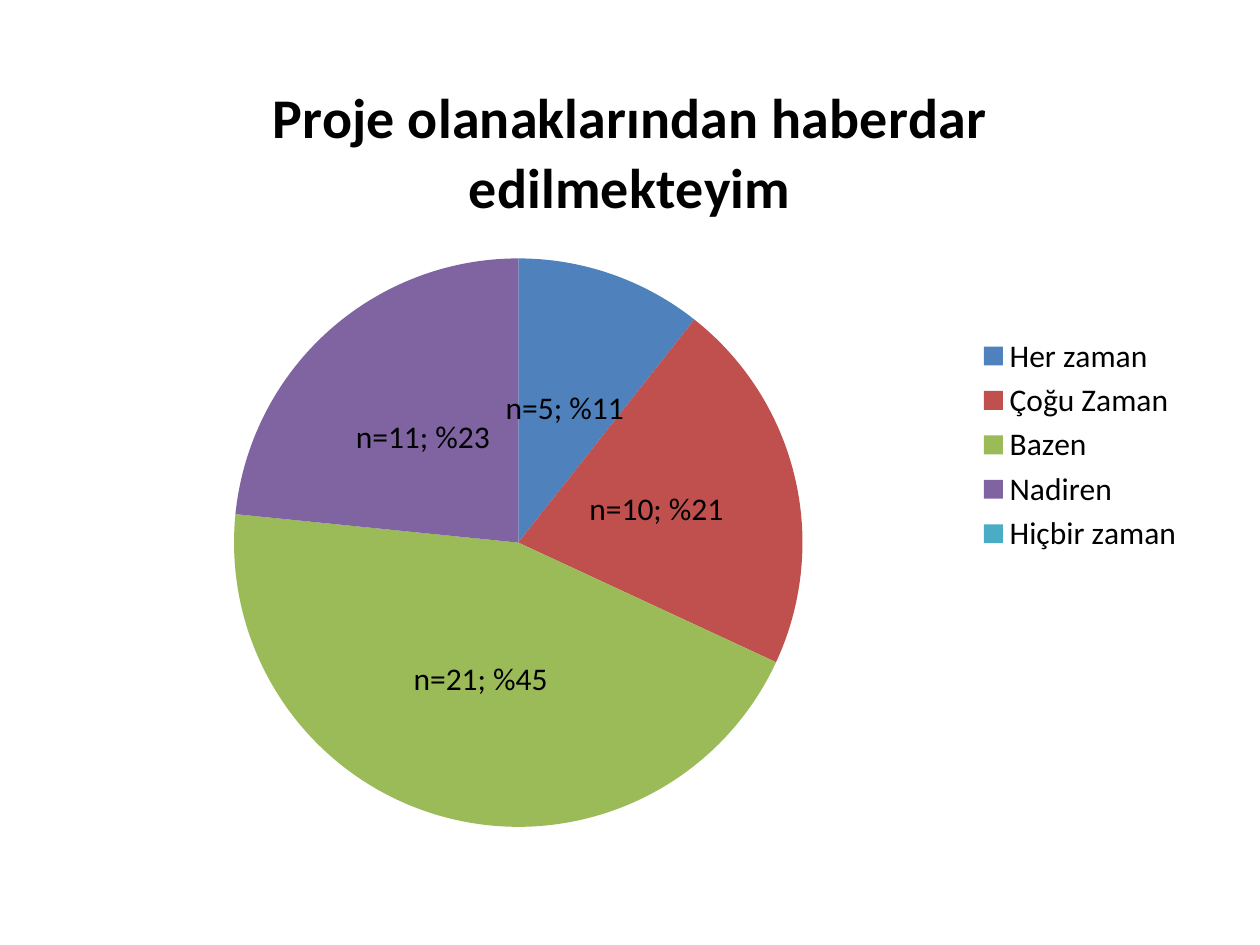
from dataclasses import dataclass

from pptx import Presentation
from pptx.chart.data import CategoryChartData
from pptx.dml.color import RGBColor
from pptx.enum.chart import XL_CHART_TYPE, XL_LABEL_POSITION, XL_LEGEND_POSITION
from pptx.oxml.ns import qn
from pptx.util import Pt


@dataclass(frozen=True)
class Theme:
    font: str = "Calibri"
    text: RGBColor = RGBColor(0, 0, 0)
    title_size: int = 32
    body_size: int = 18


@dataclass(frozen=True)
class Answer:
    name: str
    count: int | None
    color: str


THEME = Theme()
QUESTION = "Proje olanaklarından haberdar edilmekteyim"
ANSWERS = [
    Answer("Her zaman", 5, "4F81BD"),
    Answer("Çoğu Zaman", 10, "C0504D"),
    Answer("Bazen", 21, "9BBB59"),
    Answer("Nadiren", 11, "8064A2"),
    Answer("Hiçbir zaman", None, "4BACC6"),
]


def set_font(font, size: int, bold: bool = False) -> None:
    font.name = THEME.font
    font.size = Pt(size)
    font.bold = bold
    font.color.rgb = THEME.text


def style_slice(point, answer: Answer, total: int) -> None:
    point.format.fill.solid()
    point.format.fill.fore_color.rgb = RGBColor.from_string(answer.color)
    if answer.count is None:
        return
    label = point.data_label
    p = label.text_frame.paragraphs[0]
    p.text = f"n={answer.count}; %{100 * answer.count / total:.0f}"
    set_font(p.font, THEME.body_size)
    label.position = XL_LABEL_POSITION.CENTER


def add_pie(s) -> None:
    data = CategoryChartData()
    data.categories = [a.name for a in ANSWERS]
    data.add_series(QUESTION, [a.count for a in ANSWERS])
    chart = s.shapes.add_chart(
        XL_CHART_TYPE.PIE, Pt(36), Pt(26), Pt(648), Pt(456.5), data
    ).chart
    set_font(chart.font, THEME.body_size)

    # Title
    chart.has_title = True
    p = chart.chart_title.text_frame.paragraphs[0]
    p.text = QUESTION
    set_font(p.font, THEME.title_size, bold=True)
    chart.chart_title.include_in_layout = False

    # Legend
    chart.has_legend = True
    chart.legend.position = XL_LEGEND_POSITION.RIGHT
    chart.legend.include_in_layout = False

    # Slices and labels
    plot = chart.plots[0]
    plot.vary_by_categories = True
    series = plot.series[0]
    labels = series.data_labels
    labels.show_value = labels.show_percentage = True
    labels.position = XL_LABEL_POSITION.CENTER
    total = sum(a.count or 0 for a in ANSWERS)
    for i, answer in enumerate(ANSWERS):
        style_slice(series.points[i], answer, total)
    for flag in series._element.iter(qn("c:showPercent")):
        flag.set("val", "1")


def main() -> None:
    prs = Presentation()
    prs.slide_width, prs.slide_height = Pt(720), Pt(540)
    s = prs.slides.add_slide(prs.slide_layouts[6])
    add_pie(s)
    prs.save("out.pptx")


if __name__ == "__main__":
    main()
